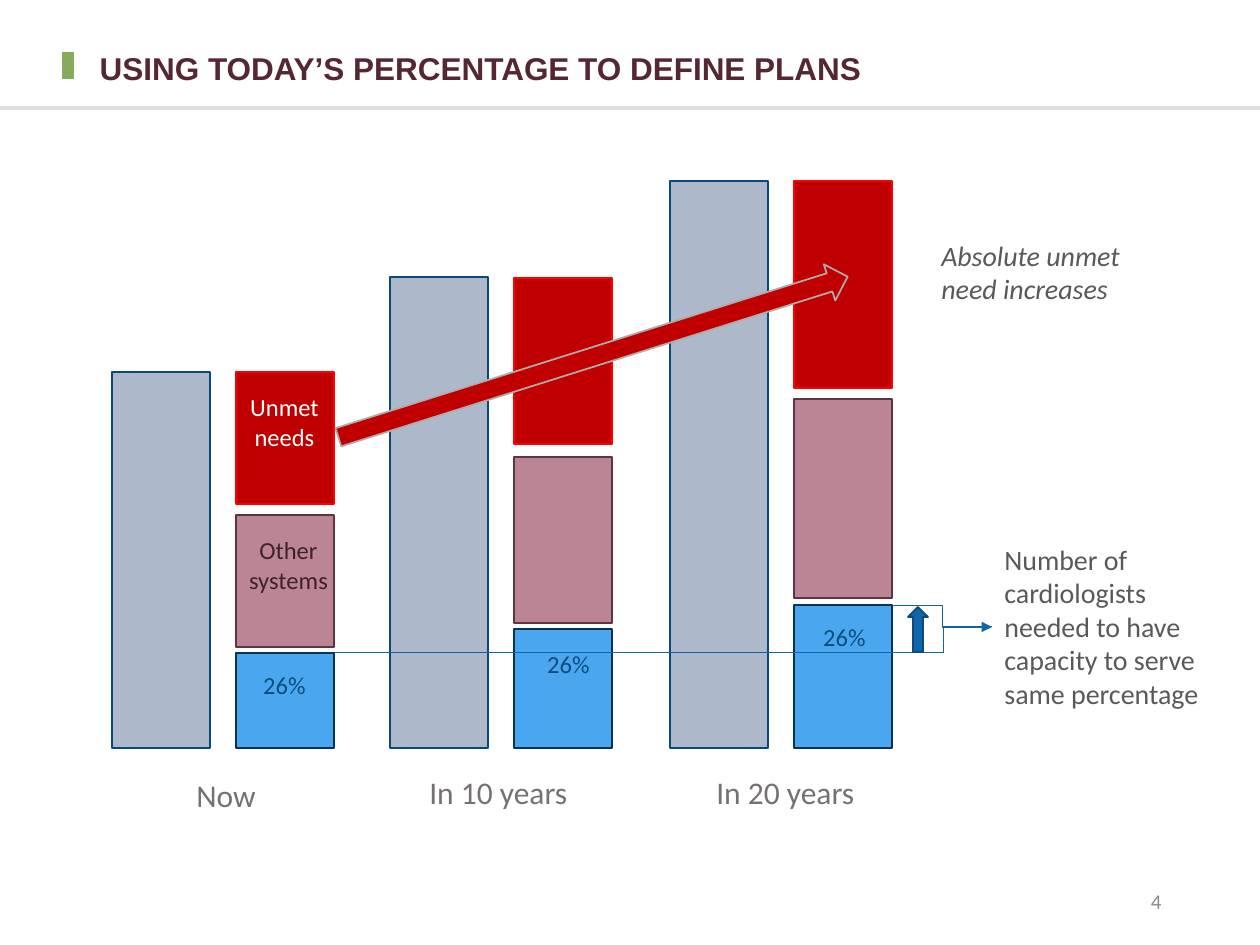
from lxml.etree import SubElement
from pptx import Presentation
from pptx.dml.color import RGBColor
from pptx.enum.shapes import MSO_CONNECTOR, MSO_SHAPE
from pptx.enum.text import MSO_ANCHOR, MSO_AUTO_SIZE, PP_ALIGN
from pptx.oxml.ns import qn
from pptx.util import Pt

PX = 914400 / 126

GREEN = RGBColor(0x86, 0xAB, 0x5D)
RULE = RGBColor(0xE0, 0xE0, 0xE0)
PLUM = RGBColor(0x55, 0x27, 0x33)
STEEL = RGBColor(0xAD, 0xB9, 0xCA)
STEEL_EDGE = RGBColor(0x08, 0x48, 0x7A)
SKY = RGBColor(0x4A, 0xA7, 0xEF)
SKY_EDGE = RGBColor(0x08, 0x33, 0x54)
SKY_TEXT = RGBColor(0x0B, 0x4C, 0x7D)
ROSE = RGBColor(0xBB, 0x85, 0x95)
ROSE_EDGE = RGBColor(0x5D, 0x34, 0x40)
ROSE_TEXT = RGBColor(0x3E, 0x22, 0x2A)
RED = RGBColor(0xC0, 0x00, 0x00)
RED_EDGE = RGBColor(0xFF, 0x00, 0x00)
BLUE = RGBColor(0x0F, 0x65, 0xA7)
BLUE_EDGE = RGBColor(0x0B, 0x4B, 0x7C)
WHITE = RGBColor(0xFF, 0xFF, 0xFF)
SILVER = RGBColor(0xAF, 0xAB, 0xAB)
DARK = RGBColor(0x59, 0x59, 0x59)
GREY = RGBColor(0x76, 0x71, 0x71)
PALE = RGBColor(0x8C, 0x8C, 0x8C)

deck = Presentation()
deck.slide_width, deck.slide_height = round(1260 * PX), round(945 * PX)
slide = deck.slides.add_slide(deck.slide_layouts[5])
shapes = slide.shapes


def block(kind, box, fill, edge):
    """Add a filled preset shape with a 1 pt outline."""
    shape = shapes.add_shape(kind, *(round(n * PX) for n in box))
    shape.shadow.inherit = False
    shape.fill.solid()
    shape.fill.fore_color.rgb = fill
    shape.line.color.rgb = edge
    shape.line.width = Pt(1)
    return shape


def label(text, box, size, color, align=PP_ALIGN.LEFT, wrap=True):
    """Add a text box with one Calibri paragraph and return its frame."""
    frame = shapes.add_textbox(*(round(n * PX) for n in box)).text_frame
    frame.text = text
    frame.word_wrap = wrap
    frame.auto_size = MSO_AUTO_SIZE.SHAPE_TO_FIT_TEXT
    frame.paragraphs[0].alignment = align
    font = frame.paragraphs[0].runs[0].font
    font.name, font.size, font.color.rgb = "Calibri", Pt(size), color
    return frame


# Title
title = shapes.title
title.left, title.top = round(87 * PX), round(34 * PX)
title.width, title.height = round(1086 * PX), round(72 * PX)
frame = title.text_frame
frame.text = "USING TODAY’S PERCENTAGE TO DEFINE PLANS"
frame.vertical_anchor = MSO_ANCHOR.MIDDLE
frame.paragraphs[0].alignment = PP_ALIGN.LEFT
frame.paragraphs[0].line_spacing = 0.9
font = frame.paragraphs[0].runs[0].font
font.name, font.size, font.bold = "Arial", Pt(18), True
font.color.rgb = PLUM

# Bars: left, total top, (top, height) of unmet, other and covered, 26% box
BASE, WIDTH, STEP = 748, 98, 124
groups = [
    (112, 372, [(372, 132), (515, 132), (653, 95)], (210, 664)),
    (390, 277, [(278, 166), (457, 166), (629, 119)], (494, 643)),
    (670, 181, [(181, 207), (399, 199), (605, 143)], (770, 616)),
]
looks = [(RED, RED_EDGE), (ROSE, ROSE_EDGE), (SKY, SKY_EDGE)]
for left, top, parts, spot in groups:
    block(MSO_SHAPE.RECTANGLE, (left, top, WIDTH, BASE - top), STEEL, STEEL_EDGE)
    for (y, high), (fill, edge) in zip(parts, looks):
        block(MSO_SHAPE.RECTANGLE, (left + STEP, y, WIDTH, high), fill, edge)
    label("26%", (*spot, 149, 43), 14, SKY_TEXT, PP_ALIGN.CENTER)

label("Unmet needs", (227, 386, 115, 72), 14, WHITE, PP_ALIGN.CENTER)
label("Other systems", (231, 529, 115, 72), 14, ROSE_TEXT, PP_ALIGN.CENTER)

# Lines: kind, ends, colour, width, bend, arrowhead
lines = [
    (MSO_CONNECTOR.STRAIGHT, (68, 52, 68, 79), GREEN, 7, None, False),
    (MSO_CONNECTOR.STRAIGHT, (0, 108, 1260, 108), RULE, 1.75, None, False),
    (MSO_CONNECTOR.ELBOW, (893, 605, 992, 627), BLUE, 0.5, 50000, True),
    (MSO_CONNECTOR.ELBOW, (334, 653, 992, 627), BLUE, 0.5, 92600, False),
]
for kind, ends, color, width, bend, head in lines:
    wire = shapes.add_connector(kind, *(round(n * PX) for n in ends))
    wire.line.color.rgb = color
    wire.line.width = Pt(width)
    props = wire._element.spPr
    if bend:
        guides = props.find(qn("a:prstGeom")).find(qn("a:avLst"))
        SubElement(guides, qn("a:gd"), name="adj1", fmla=f"val {bend}")
    if head:
        SubElement(props.find(qn("a:ln")), qn("a:tailEnd"), type="triangle")
    SubElement(props, qn("a:effectLst"))

# Arrows
block(MSO_SHAPE.UP_ARROW, (908, 607, 20, 45), BLUE, BLUE_EDGE)
trend = block(MSO_SHAPE.RIGHT_ARROW, (326, 338, 534, 38), RED, SILVER)
trend.rotation = 342.5

# Notes and captions
label("Number of cardiologists needed to have capacity to serve same percentage",
      (992, 536, 258, 183), 16, DARK)
note = label("Absolute unmet need increases", (929, 232, 258, 81), 16, DARK)
note.paragraphs[0].runs[0].font.italic = True

for text, box in [
    ("Now", (184, 770, 86, 50)),
    ("In 10 years", (417, 767, 165, 50)),
    ("In 20 years", (704, 767, 165, 50)),
]:
    label(text, box, 18, GREY, wrap=False)

page = label("4", (890, 876, 284, 50), 12, PALE, PP_ALIGN.RIGHT)
page.auto_size = MSO_AUTO_SIZE.NONE
page.vertical_anchor = MSO_ANCHOR.MIDDLE

deck.save("out.pptx")
